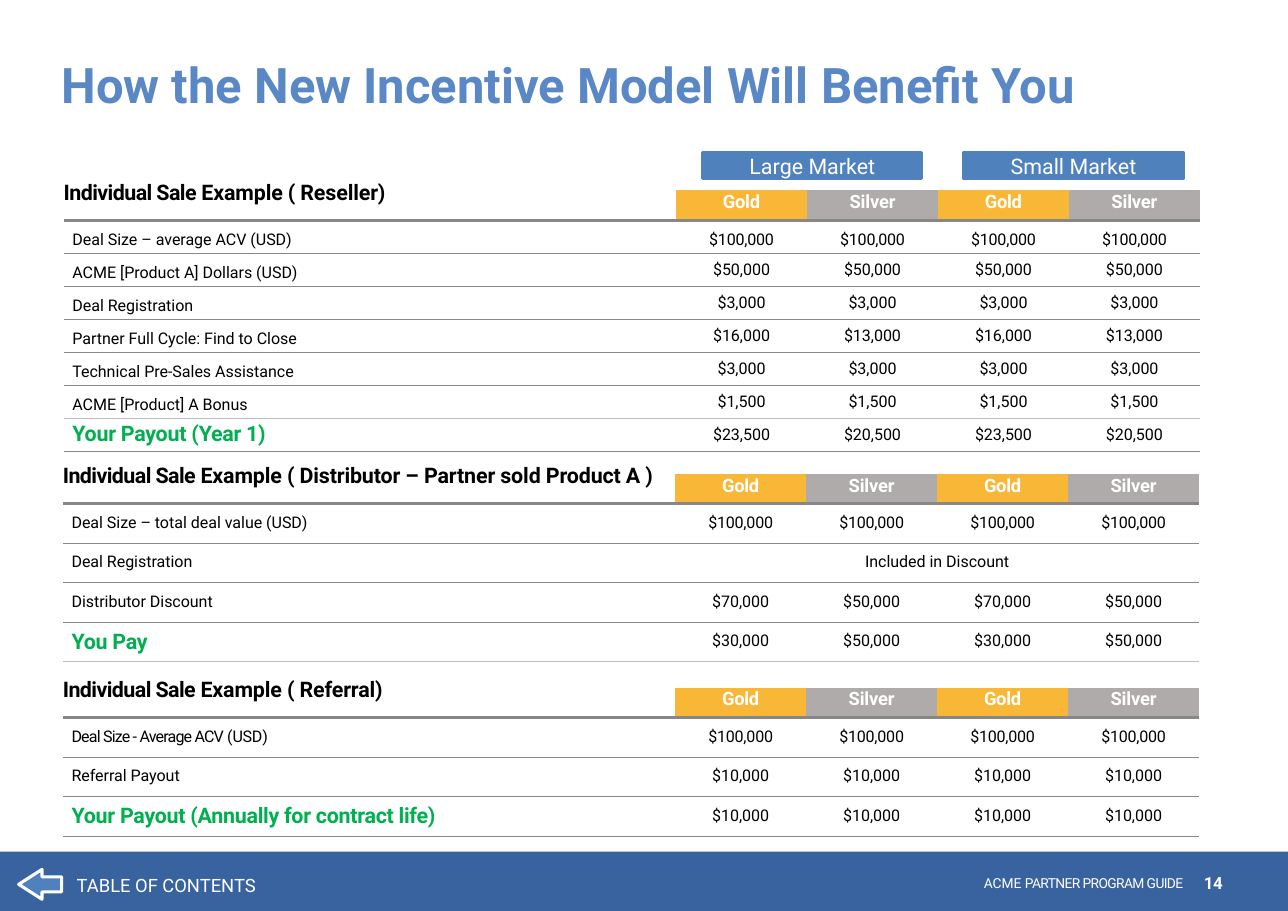
from dataclasses import dataclass
from lxml.etree import SubElement
from pptx import Presentation
from pptx.dml.color import RGBColor
from pptx.enum.shapes import MSO_SHAPE
from pptx.enum.text import MSO_ANCHOR, PP_ALIGN
from pptx.oxml.ns import qn
from pptx.util import Cm, Pt


@dataclass(frozen=True)
class Theme:
    font: str = "Roboto"
    title: str = "5A87C5"
    blue: str = "4F81BD"
    band: str = "38639F"
    gold: str = "F8B737"
    silver: str = "AFABAB"
    green: str = "00B050"
    black: str = "000000"
    white: str = "FFFFFF"
    thick: tuple = ("878787", 2.25)
    thin: tuple = ("868A8C", 0.5)
    pale: tuple = ("BFBFBF", 0.75)
    huge: float = 32
    large: float = 14
    mid: float = 12
    page: float = 11
    body: float = 10.5
    small: float = 9


@dataclass(frozen=True)
class Sale:
    left: float
    top: float
    step: float      # height of a body row
    name: str
    rows: tuple      # label, gold value, silver value
    pale: int = 0    # row that ends in a pale rule
    mid: bool = False  # values centred in height after the first row


T = Theme()
HEAD, LABEL, VALUE = 0.69, 14.12, 3.02
LEVELS = (("Gold", T.gold, -0.2), ("Silver", T.silver, -0.1)) * 2

SALES = (
    Sale(1.47, 4.39, 0.76, "Example ( Reseller)", (
        ("Deal Size – average ACV (USD)", "$100,000", "$100,000"),
        ("ACME [Product A] Dollars (USD)", "$50,000", "$50,000"),
        ("Deal Registration", "$3,000", "$3,000"),
        ("Partner Full Cycle: Find to Close", "$16,000", "$13,000"),
        ("Technical Pre-Sales Assistance", "$3,000", "$3,000"),
        ("ACME [Product] A Bonus", "$1,500", "$1,500"),
        ("Your Payout (Year 1)", "$23,500", "$20,500")), pale=6, mid=True),
    Sale(1.45, 10.92, 0.91, "Example ( Distributor – Partner sold Product A )", (
        ("Deal Size – total deal value (USD)", "$100,000", "$100,000"),
        ("Deal Registration", "Included in Discount"),
        ("Distributor Discount", "$70,000", "$50,000"),
        ("You Pay", "$30,000", "$50,000")), pale=4),
    Sale(1.45, 15.85, 0.91, "Example ( Referral)", (
        ((("Deal Size - Average ACV ", -0.5), ("(USD)", -0.1)),
         "$100,000", "$100,000"),
        ("Referral Payout", "$10,000", "$10,000"),
        ("Your Payout (Annually for contract life)", "$10,000", "$10,000"))),
)


def write(frame, text, size, color, bold=False, align=PP_ALIGN.LEFT,
          line=None, space=0):
    """Fill a frame with one paragraph; text is a string or (part, spacing) pairs."""
    para = frame.paragraphs[0]
    para.alignment = align
    if line:
        para.line_spacing = Pt(line)
    font = para.font
    font.name, font.size, font.bold = T.font, Pt(size), bold
    font.color.rgb = RGBColor.from_string(color)
    for part, gap in ((text, space),) if isinstance(text, str) else text:
        run = para.add_run()
        run.text = part
        if gap:
            run._r.get_or_add_rPr().set("spc", str(round(gap * 100)))


def add_text(slide, box, text, size, color, inset=(0, 0), **style):
    frame = slide.shapes.add_textbox(*map(Cm, box)).text_frame
    frame.word_wrap = True
    frame.margin_left = frame.margin_right = Cm(inset[0])
    frame.margin_top, frame.margin_bottom = Cm(inset[1]), 0
    write(frame, text, size, color, **style)


def add_block(slide, kind, box, fill, line=None):
    shape = slide.shapes.add_shape(kind, *map(Cm, box))
    shape.shadow.inherit = False
    shape.fill.solid()
    shape.fill.fore_color.rgb = RGBColor.from_string(fill)
    if line:
        shape.line.color.rgb = RGBColor.from_string(line)
        shape.line.width = Pt(2)
    else:
        shape.line.fill.background()
    return shape


def add_badge(slide, left, text):
    shape = add_block(slide, MSO_SHAPE.RECTANGLE, (left, 3.51, 5.05, 0.61),
                      T.blue, T.blue)
    frame = shape.text_frame
    frame.word_wrap = False
    frame.margin_top = frame.margin_bottom = 0
    frame.vertical_anchor = MSO_ANCHOR.MIDDLE
    write(frame, text, T.large, T.white, align=PP_ALIGN.CENTER)


def style_cell(cell, above, below, fill=None, left=0, top=0, mid=False):
    cell.margin_left, cell.margin_top = Cm(left), Cm(top)
    cell.margin_right = cell.margin_bottom = 0
    cell.vertical_anchor = MSO_ANCHOR.MIDDLE if mid else MSO_ANCHOR.TOP
    for tag, rule in (("a:lnT", above), ("a:lnB", below)):
        if rule:
            edge = SubElement(cell._tc.get_or_add_tcPr(), qn(tag),
                              w=str(Pt(rule[1])))
            paint = SubElement(edge, qn("a:solidFill"))
            SubElement(paint, qn("a:srgbClr"), val=rule[0])
    if fill:
        cell.fill.solid()
        cell.fill.fore_color.rgb = RGBColor.from_string(fill)
    else:
        cell.fill.background()


def add_sale(slide, sale):
    count = len(sale.rows)
    frame = slide.shapes.add_table(
        count + 1, 5, Cm(sale.left), Cm(sale.top),
        Cm(LABEL + 4 * VALUE), Cm(HEAD + count * sale.step))
    table = frame.table
    table.first_row = table.horz_banding = False
    # Plain table style without a grid
    table._tbl.tblPr.find(qn("a:tableStyleId")).text = \
        "{2D5ABB26-0587-4C30-8999-92F81FD0307C}"
    for i, col in enumerate(table.columns):
        col.width = Cm(VALUE if i else LABEL)
    for i, row in enumerate(table.rows):
        row.height = Cm(sale.step if i else HEAD)

    # Header row
    cell = table.cell(0, 0)
    style_cell(cell, None, T.thick)
    write(cell.text_frame, (("Individual Sale ", -0.4), (sale.name, -0.1)),
          T.large, T.black, bold=True, line=10.2)
    for c, (name, fill, gap) in enumerate(LEVELS, 1):
        cell = table.cell(0, c)
        style_cell(cell, None, T.thick, fill, mid=True)
        write(cell.text_frame, name, T.mid, T.white, bold=True,
              align=PP_ALIGN.CENTER, line=10.2, space=gap)

    # Body rows, the last one being the total
    above = T.thick
    for r, (label, *pair) in enumerate(sale.rows, 1):
        below = T.pale if r == sale.pale else T.thin
        total = r == count
        cell = table.cell(r, 0)
        style_cell(cell, above, below, left=0.2, top=0 if total else 0.23,
                   mid=total)
        if total:
            write(cell.text_frame, label, T.large, T.green, bold=True, space=-0.2)
        else:
            write(cell.text_frame, label, T.body, T.black)
        mid = sale.mid and r > 1
        for c in range(1, 5):
            style_cell(table.cell(r, c), above, below,
                       top=0 if mid else 0.23, mid=mid)
        if len(pair) == 1:
            table.cell(r, 1).merge(table.cell(r, 4))
        else:
            pair = pair * 2
        for c, value in enumerate(pair, 1):
            write(table.cell(r, c).text_frame, value, T.body, T.black,
                  align=PP_ALIGN.CENTER, space=-0.1 if r == 1 else 0)
        above = below


def add_footer(slide):
    add_block(slide, MSO_SHAPE.RECTANGLE, (0, 19.63, 29.7, 1.37), T.band)
    add_text(slide, (27.76, 20.19, 0.7, 0.41), "14", T.page, T.white,
             bold=True, line=11.2, space=-0.2)
    add_text(slide, (19.91, 20.22, 7.37, 0.33),
             (("ACME ", 0), ("PARTNER PROGRAM GUIDE", -0.4)), T.small, T.white,
             align=PP_ALIGN.RIGHT, line=9.3)
    add_text(slide, (1.52, 20.02, 5.64, 0.76), "TABLE OF CONTENTS", T.mid,
             T.white, inset=(0.25, 0.13))
    arrow = add_block(slide, MSO_SHAPE.RIGHT_ARROW, (0.43, 20.04, 0.99, 0.69),
                      T.blue, T.white)
    arrow.rotation = 180
    arrow.adjustments[1] = 0.78


def main():
    deck = Presentation()
    deck.slide_width, deck.slide_height = Cm(29.7), Cm(21)
    slide = deck.slides.add_slide(deck.slide_layouts[6])

    # Title
    add_text(slide, (1.42, 1.09, 27.79, 1.57),
             "How the New Incentive Model Will Benefit You", T.huge, T.title,
             inset=(0, 0.3), bold=True, line=34.5)

    # Markets and sale examples
    add_badge(slide, 16.21, "Large Market")
    add_badge(slide, 22.23, "Small Market")
    for sale in SALES:
        add_sale(slide, sale)

    add_footer(slide)
    deck.save("out.pptx")


if __name__ == "__main__":
    main()
